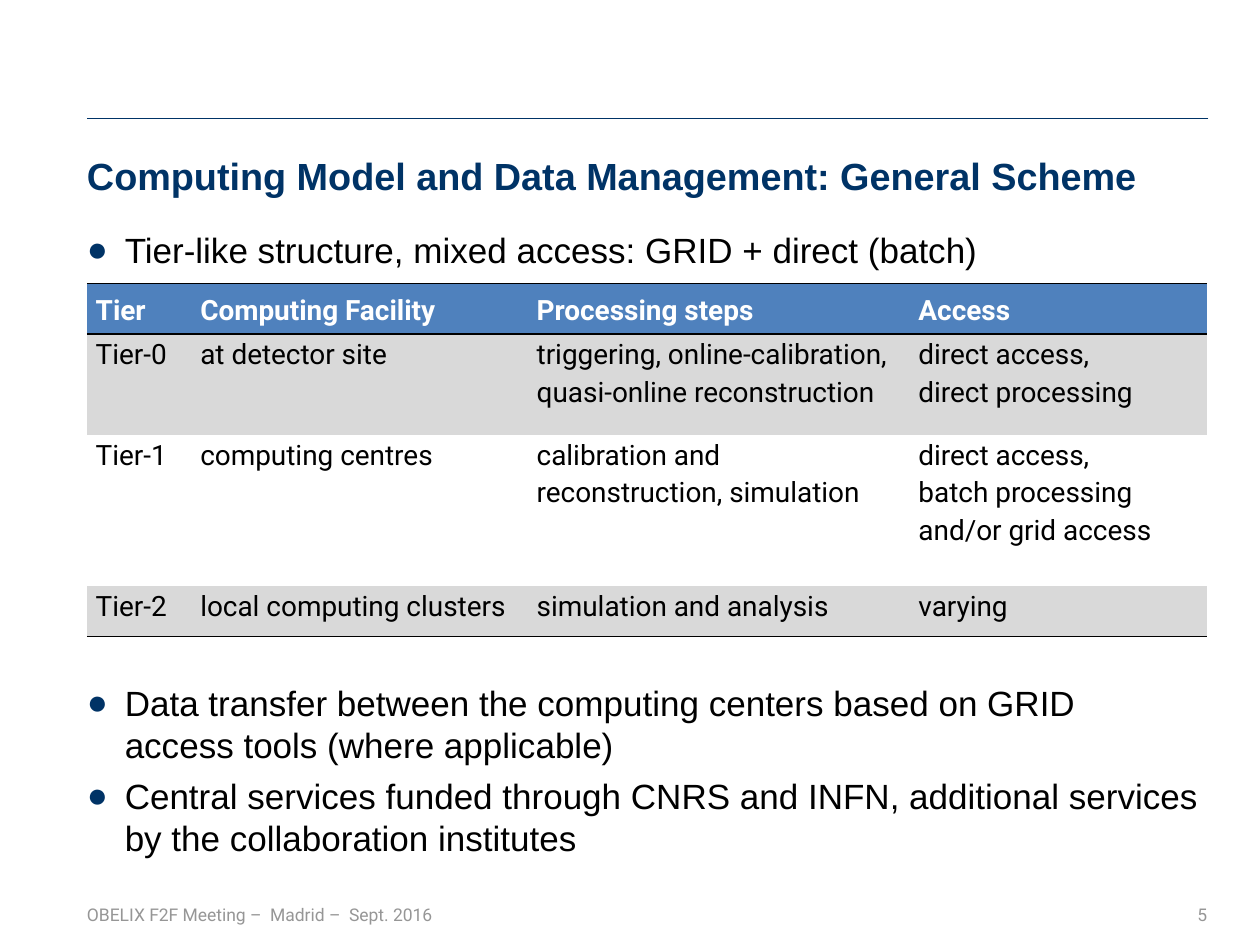
from typing import NamedTuple

from pptx import Presentation
from pptx.dml.color import RGBColor
from pptx.enum.shapes import MSO_CONNECTOR as Link
from pptx.enum.text import MSO_ANCHOR as Anchor, MSO_AUTO_SIZE as Fit, PP_ALIGN as Align
from pptx.oxml.ns import qn
from pptx.oxml.xmlchemy import OxmlElement as Node
from pptx.util import Inches, Pt

NAVY = RGBColor(0x00, 0x33, 0x66)
BLUE = RGBColor(0x4F, 0x81, 0xBD)
BAND = RGBColor(0xD9, 0xD9, 0xD9)
GRAY = RGBColor(0x96, 0x96, 0x96)
BLACK = RGBColor(0, 0, 0)
WHITE = RGBColor(255, 255, 255)

LEFT, WIDTH = 0.69, 8.9
PLAIN = "{2D5ABB26-0587-4C30-8999-92F81FD0307C}"  # table style without grid


class Bullet(NamedTuple):
    text: str
    before: float


class Note(NamedTuple):
    text: str
    left: float
    width: float
    inset: float
    align: Align


class Row(NamedTuple):
    cells: tuple
    height: float
    fill: RGBColor


BULLETS = [
    Bullet("Tier-like structure, mixed access: GRID + direct (batch)", 0),
    # the space before this one leaves room for the table
    Bullet("Data transfer between the computing centers based on GRID \v"
           "access tools (where applicable)", 235.2),
    Bullet("Central services funded through CNRS and INFN, additional services "
           "by the collaboration institutes", 4.8),
]
NOTES = [
    Note("5", 9.09, 0.49, 0.1, Align.RIGHT),
    Note("OBELIX F2F Meeting –  Madrid –  Sept. 2016", LEFT, 7.45, 0, Align.LEFT),
]
COLS = (0.83, 2.67, 3.03, 2.36)
ROWS = [
    Row(("Tier", "Computing Facility", "Processing steps", "Access"), 0.4, BLUE),
    Row(("Tier-0", "at detector site",
         "triggering, online-calibration, quasi-online reconstruction",
         "direct access,\ndirect processing"), 0.8, BAND),
    Row(("Tier-1", "computing centres", "calibration and reconstruction, simulation",
         "direct access,\nbatch processing and/or grid access"), 1.2, WHITE),
    Row(("Tier-2", "local computing clusters", "simulation and analysis", "varying"),
        0.4, BAND),
]


def place(shape, left: float, top: float, width: float, height: float) -> None:
    shape.left, shape.top = Inches(left), Inches(top)
    shape.width, shape.height = Inches(width), Inches(height)


def style(para, face: str, size: float, color: RGBColor, bold: bool = False) -> None:
    for run in para.runs:
        for key, value in {"name": face, "size": Pt(size), "bold": bold}.items():
            setattr(run.font, key, value)
        run.font.color.rgb = color


def setup(frame, anchor: Anchor, left: float = 0) -> None:
    values = {"margin_left": Inches(left), "margin_right": 0, "margin_top": 0,
              "margin_bottom": 0, "word_wrap": True, "auto_size": Fit.NONE,
              "vertical_anchor": anchor}
    for key, value in values.items():
        setattr(frame, key, value)


def mark(para) -> None:
    """Give the paragraph a navy bullet with a hanging indent."""
    props = para._p.get_or_add_pPr()
    props.set("marL", str(Inches(0.3)))
    props.set("indent", str(-Inches(0.3)))
    tint, color, char = Node("a:buClr"), Node("a:srgbClr"), Node("a:buChar")
    color.set("val", str(NAVY))
    char.set("char", "●")
    tint.append(color)
    props.extend([tint, char])


def rule(cell, side: str) -> None:
    line, fill, color = Node("a:" + side), Node("a:solidFill"), Node("a:srgbClr")
    line.set("w", str(Pt(1)))
    color.set("val", str(BLACK))
    fill.append(color)
    line.append(fill)
    cell._tc.get_or_add_tcPr().append(line)


def add_line(slide) -> None:
    line = slide.shapes.add_connector(
        Link.STRAIGHT, Inches(LEFT + WIDTH), Inches(0.94), Inches(LEFT), Inches(0.94))
    line.line.color.rgb = NAVY
    line.line.width = Pt(0.75)
    line._element.spPr.append(Node("a:effectLst"))


def add_title(slide) -> None:
    title = slide.shapes.title
    place(title, LEFT, 1.18, WIDTH, 0.39)
    setup(title.text_frame, Anchor.BOTTOM)
    title.text_frame.text = "Computing Model and Data Management: General Scheme"
    para = title.text_frame.paragraphs[0]
    para.alignment, para.line_spacing = Align.LEFT, Pt(28)
    style(para, "Arial", 21.6, NAVY, True)


def add_body(slide, items: list[Bullet]) -> None:
    body = slide.placeholders[1]
    place(body, LEFT, 1.81, WIDTH, 5.2)
    frame = body.text_frame
    setup(frame, Anchor.TOP)
    for i, item in enumerate(items):
        para = frame.add_paragraph() if i else frame.paragraphs[0]
        para.text = item.text
        para.line_spacing, para.space_before = Pt(24), Pt(item.before)
        mark(para)
        style(para, "Arial", 20, BLACK)


def add_note(slide, note: Note) -> None:
    box = slide.shapes.add_textbox(
        Inches(note.left), Inches(7.01), Inches(note.width), Inches(0.49))
    setup(box.text_frame, Anchor.MIDDLE, note.inset)
    para = box.text_frame.paragraphs[0]
    para.text, para.alignment = note.text, note.align
    style(para, "Roboto", 10, GRAY)


def fill_cell(cell, text: str, fill: RGBColor, head: bool, last: bool) -> None:
    cell.margin_left = cell.margin_right = Inches(0.07)
    cell.margin_top = cell.margin_bottom = 0
    cell.vertical_anchor = Anchor.MIDDLE if head else Anchor.TOP
    if head:
        rule(cell, "lnT")
    if head or last:
        rule(cell, "lnB")
    cell.fill.solid()
    cell.fill.fore_color.rgb = fill
    cell.text = text
    for para in cell.text_frame.paragraphs:
        para.line_spacing = 1.15
        style(para, "Roboto", 16, WHITE if head else BLACK, head)


def add_tiers(slide, rows: list[Row]) -> None:
    table = slide.shapes.add_table(
        len(rows), len(COLS), Inches(LEFT), Inches(2.25), Inches(WIDTH),
        Inches(sum(row.height for row in rows))).table
    table.horz_banding = False
    table._tbl.tblPr.find(qn("a:tableStyleId")).text = PLAIN
    for col, width in zip(table.columns, COLS):
        col.width = Inches(width)
    for i, row in enumerate(rows):
        table.rows[i].height = Inches(row.height)
        for j, text in enumerate(row.cells):
            fill_cell(table.cell(i, j), text, row.fill, i == 0, i == len(rows) - 1)


def main() -> None:
    deck = Presentation()
    deck.slide_width, deck.slide_height = Inches(10), Inches(7.5)
    slide = deck.slides.add_slide(deck.slide_layouts[1])
    # heading and list
    add_line(slide)
    add_title(slide)
    add_body(slide, BULLETS)
    # page number and footer
    for note in NOTES:
        add_note(slide, note)
    # tier table
    add_tiers(slide, ROWS)
    deck.save("out.pptx")


if __name__ == "__main__":
    main()
